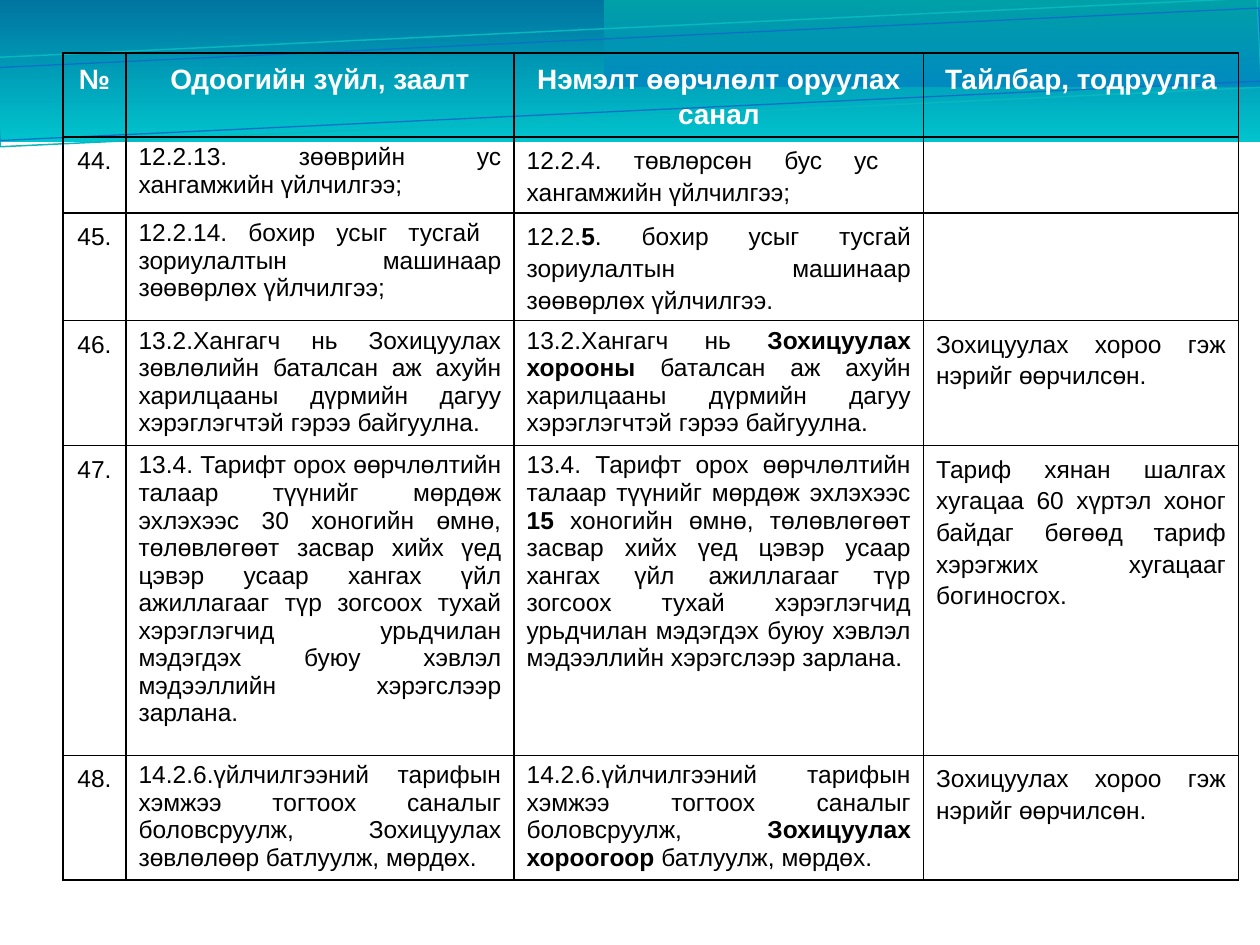
from dataclasses import dataclass
from lxml.etree import SubElement as Sub
from pptx import Presentation
from pptx.dml.color import RGBColor as Rgb
from pptx.enum.shapes import MSO_SHAPE as Kind
from pptx.enum.text import PP_ALIGN as Align
from pptx.oxml.ns import qn
from pptx.util import Inches, Pt


@dataclass(frozen=True)
class Theme:
    font: str = "Arial"
    head: int = 16
    body: int = 14
    white: str = "FFFFFF"
    black: str = "000000"
    band: tuple = ("0074A0", "00C4CD")
    patch: tuple = ("008ABF", "00A0A8")
    teal: str = "09B7BF"
    blue: str = "0F6FC6"
    loose: float = 1.15
    rule: float = 1


THEME = Theme()
WIDE, HIGH = 10, 7.5
COLS = (0.5, 3.08, 3.25, 2.5)
ROWS = (0.65, 0.57, 0.85, 0.99, 2.46, 0.99)
HEADS = ("№", "Одоогийн зүйл, заалт", "Нэмэлт өөрчлөлт оруулах санал", "Тайлбар, тодруулга")
FIRST = 44
RENAMED = "Зохицуулах хороо гэж нэрийг өөрчилсөн."
SUPPLY = " баталсан аж ахуйн харилцааны дүрмийн дагуу хэрэглэгчтэй гэрээ байгуулна."
TARIFF = "13.4. Тарифт орох өөрчлөлтийн талаар түүнийг мөрдөж эхлэхээс "
NOTICE = (
    " хоногийн өмнө, төлөвлөгөөт засвар хийх үед цэвэр усаар хангах үйл ажиллагааг түр "
    "зогсоох тухай хэрэглэгчид урьдчилан мэдэгдэх буюу хэвлэл мэдээллийн хэрэгслээр зарлана."
)
RATES = "14.2.6.үйлчилгээний тарифын хэмжээ тогтоох саналыг боловсруулж, "
PASSED = " батлуулж, мөрдөх."
ITEMS = (
    (
        "12.2.13. зөөврийн ус хангамжийн үйлчилгээ;",
        ("12.2.4. төвлөрсөн бус ус  хангамжийн үйлчилгээ;",),
        "",
    ),
    (
        "12.2.14. бохир усыг тусгай  зориулалтын машинаар зөөвөрлөх үйлчилгээ;",
        ("12.2.", "5", ". бохир усыг тусгай зориулалтын машинаар зөөвөрлөх үйлчилгээ."),
        "",
    ),
    (
        "13.2.Хангагч нь Зохицуулах зөвлөлийн" + SUPPLY,
        ("13.2.Хангагч нь ", "Зохицуулах хорооны", SUPPLY),
        RENAMED,
    ),
    (
        TARIFF + "30" + NOTICE,
        (TARIFF, "15", NOTICE),
        "Тариф хянан шалгах хугацаа 60 хүртэл хоног байдаг бөгөөд тариф хэрэгжих "
        "хугацааг богиносгох.",
    ),
    (
        RATES + "Зохицуулах зөвлөлөөр" + PASSED,
        (RATES, "Зохицуулах хороогоор", PASSED),
        RENAMED,
    ),
)


def add_box(slide, left, top, wide, high):
    box = slide.shapes.add_shape(
        Kind.RECTANGLE, *(Inches(size) for size in (left, top, wide, high))
    )
    box.shadow.inherit = False
    return box


def add_band(slide, area, tones, angle):
    box = add_box(slide, *area)
    box.line.fill.background()
    box.fill.gradient()
    box.fill.gradient_angle = angle
    for stop, tone in zip(box.fill.gradient_stops, tones):
        stop.color.rgb = Rgb.from_string(tone)


def add_frame(slide, area, tone, weight):
    box = add_box(slide, *area)
    box.rotation = 357.3
    box.fill.background()
    box.line.color.rgb = Rgb.from_string(tone)
    box.line.width = Pt(weight)


def rule_cell(cell):
    props = cell._tc.get_or_add_tcPr()
    for side in ("L", "R", "T", "B"):
        line = Sub(props, qn(f"a:ln{side}"), w=str(Pt(THEME.rule)))
        Sub(Sub(line, qn("a:solidFill")), qn("a:srgbClr"), val=THEME.black)
    cell.fill.background()


def fill_cell(cell, parts, align, space=None, head=False):
    para = cell.text_frame.paragraphs[0]
    para.alignment = align
    if space:
        para.line_spacing = space
    for spot, part in enumerate(parts):
        run = para.add_run()
        run.text = part
        font = run.font
        font.name = THEME.font
        font.size = Pt(THEME.head if head else THEME.body)
        font.bold = head or spot == 1
        font.color.rgb = Rgb.from_string(THEME.white if head else THEME.black)


def add_grid(slide):
    table = slide.shapes.add_table(
        len(ROWS), len(COLS), Inches(0.5), Inches(0.42), Inches(sum(COLS)), Inches(sum(ROWS))
    ).table
    table.first_row = table.horz_banding = False
    for col, wide in zip(table.columns, COLS):
        col.width = Inches(wide)
    for row, high in zip(table.rows, ROWS):
        row.height = Inches(high)
    for cell in table.iter_cells():
        rule_cell(cell)
    for col, text in enumerate(HEADS):
        fill_cell(table.cell(0, col), (text,), Align.CENTER, THEME.loose, head=True)
    for row, (old, new, note) in enumerate(ITEMS, 1):
        fill_cell(table.cell(row, 0), (f"{FIRST + row - 1}.",), Align.CENTER, THEME.loose)
        fill_cell(table.cell(row, 1), (old,), Align.JUSTIFY)
        fill_cell(table.cell(row, 2), new, Align.JUSTIFY, THEME.loose if row < 3 else None)
        if note:
            fill_cell(table.cell(row, 3), (note,), Align.JUSTIFY, THEME.loose)


def main():
    deck = Presentation()
    deck.slide_width, deck.slide_height = Inches(WIDE), Inches(HIGH)
    slide = deck.slides.add_slide(deck.slide_layouts[6])
    add_band(slide, (-0.01, -0.01, 10.02, 1.14), THEME.band, 270)
    add_band(slide, (4.79, -0.01, 5.21, 0.7), THEME.patch, 90)
    add_frame(slide, (-0.02, 0.22, 10.02, 0.71), THEME.teal, 0.85)
    add_frame(slide, (-0.02, 0.3, 10.03, 0.58), THEME.blue, 0.75)
    add_grid(slide)
    deck.save("out.pptx")


if __name__ == "__main__":
    main()
